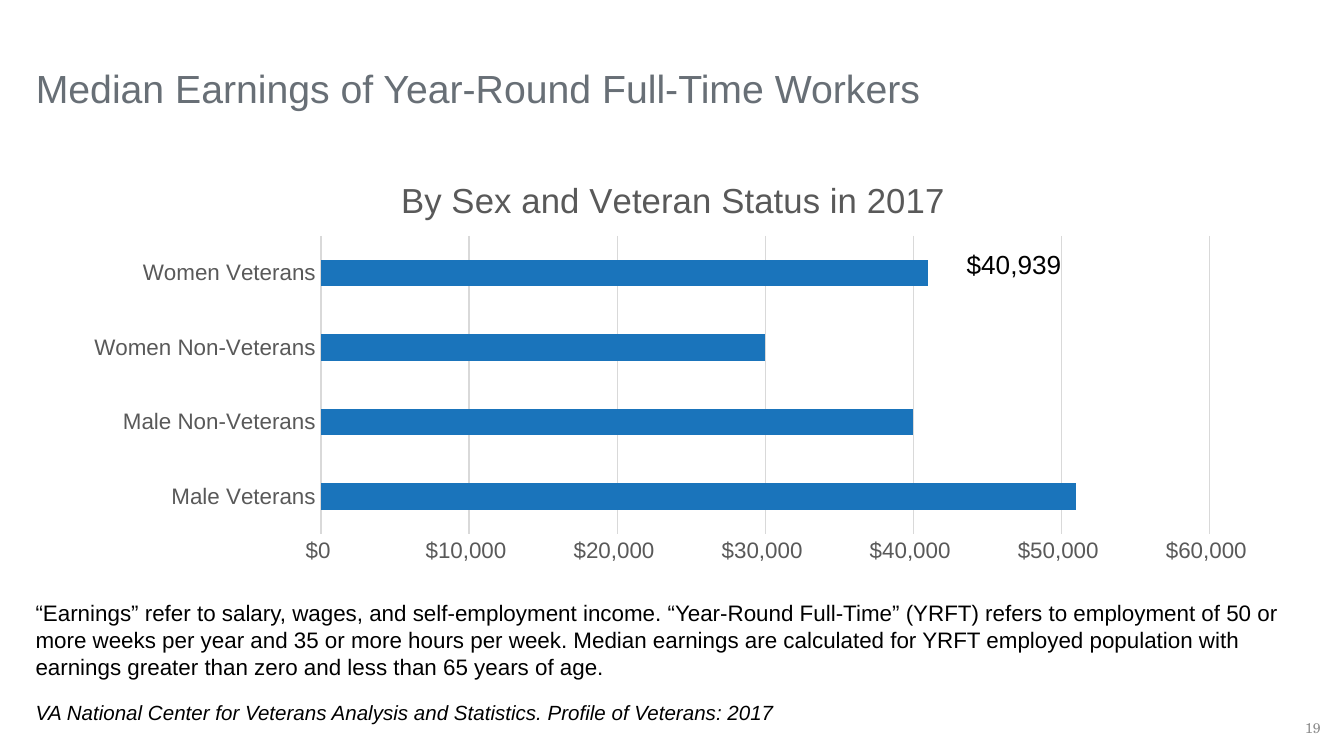
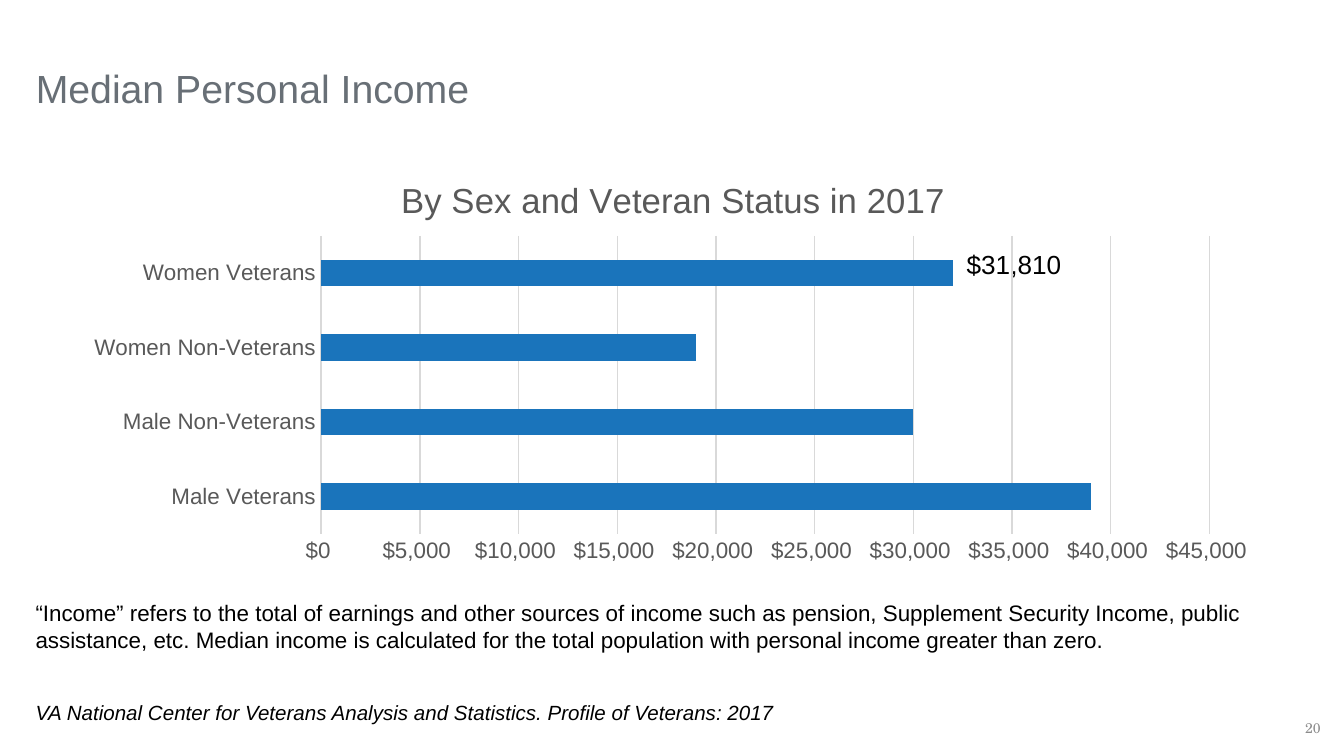
import dataclasses
import typing

import lxml.etree
import pptx
import pptx.chart.data
import pptx.dml.color
import pptx.enum.chart
import pptx.enum.text
import pptx.oxml
import pptx.oxml.ns
import pptx.util

Anchor = pptx.enum.text.MSO_ANCHOR
Align = pptx.enum.text.PP_ALIGN
AutoSize = pptx.enum.text.MSO_AUTO_SIZE

SLIDE_WIDTH = pptx.util.Inches(10)
SLIDE_HEIGHT = pptx.util.Inches(5.625)
COLUMN = SLIDE_WIDTH / 100
ROW = SLIDE_HEIGHT / 100


@dataclasses.dataclass(frozen=True)
class Type:
    size: float
    color: str
    name: str = "Arial"
    italic: bool = False


@dataclasses.dataclass(frozen=True)
class Theme:
    title: Type = Type(21, "686F76")
    chart_title: Type = Type(18.6, "595959")
    axis: Type = Type(12, "595959")
    callout: Type = Type(14, "000000")
    definition: Type = Type(12, "000000")
    citation: Type = Type(11, "000000", italic=True)
    page_number: Type = Type(7.5, "8C8C8C", "TeX Gyre Schola")
    chart: Type = Type(10, "000000")
    bar: str = "1A74BB"
    grid: str = "D9D9D9"
    grid_width: float = 0.75


@dataclasses.dataclass(frozen=True)
class Area:
    """A place on the slide, counted in columns and rows."""
    column: float
    row: float
    columns: float
    rows: float

    def frame(self) -> dict[str, int]:
        return {
            "left": round(self.column * COLUMN),
            "top": round(self.row * ROW),
            "width": round(self.columns * COLUMN),
            "height": round(self.rows * ROW),
        }


@dataclasses.dataclass(frozen=True)
class EarningsSlide:
    title: str
    women_veterans: str
    medians: tuple[int, ...]
    axis_maximum: int
    axis_step: int
    definition: str
    definition_rows: float
    page: int


THEME = Theme()
MARGIN = 1.66
TITLE_AREA = Area(MARGIN, 1.1, 76.7, 14.5)
CALLOUT_AREA = Area(70.94, 32, 14.8, 6.04)
CHART_AREA = Area(5.22, 21.14, 89.8, 54.4)
CITATION_AREA = Area(MARGIN, 91.73, 71.9, 5.16)
PAGE_AREA = Area(95.06, 93.6, 4.2, 5.33)

GROUPS = ("Male Veterans", "Male Non-Veterans", "Women Non-Veterans", "Women Veterans")
CHART_TITLE = "By Sex and Veteran Status in 2017"
CITATION = "VA National Center for Veterans Analysis and Statistics. Profile of Veterans: 2017"
DOLLARS = '"$"#,##0_);[Red]\\("$"#,##0\\)'

SLIDES = (
    EarningsSlide(
        "Median Earnings of Year-Round Full-Time Workers",
        "$40,939",
        (51000, 40000, 30000, 41000),
        60000,
        10000,
        "“Earnings” refer to salary, wages, and self-employment income. “Year-Round "
        "Full-Time” (YRFT) refers to employment of 50 or more weeks per year and 35 or "
        "more hours per week. Median earnings are calculated for YRFT employed population "
        "with earnings greater than zero and less than 65 years of age.",
        12.62,
        19,
    ),
    EarningsSlide(
        "Median Personal Income",
        "$31,810",
        (39000, 30000, 19000, 32000),
        45000,
        5000,
        "“Income” refers to the total of earnings and other sources of income such as "
        "pension, Supplement Security Income, public assistance, etc. Median income is "
        "calculated for the total population with personal income greater than zero.",
        8.89,
        20,
    ),
)


def assign(target: typing.Any, values: dict[str, typing.Any]) -> None:
    for attribute, value in values.items():
        setattr(target, attribute, value)


def rgb(color: str) -> pptx.dml.color.RGBColor:
    return pptx.dml.color.RGBColor.from_string(color)


def set_type(font: typing.Any, style: Type) -> None:
    assign(font, {
        "size": pptx.util.Pt(style.size),
        "name": style.name,
        "italic": style.italic,
        "bold": False,
    })
    font.color.rgb = rgb(style.color)


def write(shape: typing.Any, text: str, style: Type, anchor: Anchor = Anchor.TOP,
          align: Align = Align.LEFT, auto_size: AutoSize = AutoSize.NONE) -> None:
    frame = shape.text_frame
    assign(frame, {
        "text": text,
        "word_wrap": True,
        "vertical_anchor": anchor,
        "auto_size": auto_size,
    })
    paragraph = frame.paragraphs[0]
    paragraph.alignment = align
    set_type(paragraph.runs[0].font, style)


def add_text(slide: typing.Any, area: Area, text: str, style: Type,
             **placing: typing.Any) -> None:
    write(slide.shapes.add_textbox(**area.frame()), text, style, **placing)


def layout_element(modes: dict[str, str], percents: dict[str, float]) -> typing.Any:
    """Make a manual layout from percentages of the chart's size."""
    layout = pptx.oxml.parse_xml(f"<c:layout {pptx.oxml.ns.nsdecls('c')}/>")
    manual = lxml.etree.SubElement(layout, pptx.oxml.ns.qn("c:manualLayout"))
    shares = {tag: f"{percent / 100:.4f}" for tag, percent in percents.items()}
    for tag, value in (modes | shares).items():
        part = lxml.etree.SubElement(manual, pptx.oxml.ns.qn(f"c:{tag}"))
        part.set("val", value)
    return layout


def place_chart_parts(chart: typing.Any) -> None:
    title = chart.chart_title._element
    plot_area = chart._chartSpace.chart.plotArea
    for parent in (title, plot_area):
        for automatic in parent.findall(pptx.oxml.ns.qn("c:layout")):
            parent.remove(automatic)
    edges = {"xMode": "edge", "yMode": "edge"}
    title.find(pptx.oxml.ns.qn("c:tx")).addnext(
        layout_element(edges, {"x": 26.9, "y": 2.6}))
    plot_area.insert(0, layout_element(
        {"layoutTarget": "inner"} | edges, {"x": 20.8, "y": 18.5, "w": 73.6, "h": 72.5}))


def draw_grid_line(line: typing.Any) -> None:
    line.color.rgb = rgb(THEME.grid)
    line.width = pptx.util.Pt(THEME.grid_width)


def add_median_chart(slide: typing.Any, content: EarningsSlide) -> None:
    data = pptx.chart.data.CategoryChartData(number_format=DOLLARS)
    data.categories = GROUPS
    data.add_series("Series 1", content.medians)
    frame = CHART_AREA.frame()
    chart = slide.shapes.add_chart(
        pptx.enum.chart.XL_CHART_TYPE.BAR_CLUSTERED,
        frame["left"], frame["top"], frame["width"], frame["height"], data).chart
    set_type(chart.font, THEME.chart)
    assign(chart, {"has_legend": False, "has_title": True})

    chart.chart_title.include_in_layout = False
    heading = chart.chart_title.text_frame
    heading.text = CHART_TITLE
    set_type(heading.paragraphs[0].runs[0].font, THEME.chart_title)

    bars = chart.plots[0]
    assign(bars, {"gap_width": 182, "vary_by_categories": False})
    bars.series[0].format.fill.solid()
    bars.series[0].format.fill.fore_color.rgb = rgb(THEME.bar)

    groups, dollars = chart.category_axis, chart.value_axis
    no_tick = pptx.enum.chart.XL_TICK_MARK.NONE
    for axis in (groups, dollars):
        assign(axis, {"major_tick_mark": no_tick, "minor_tick_mark": no_tick})
        set_type(axis.tick_labels.font, THEME.axis)
    groups.has_major_gridlines = False
    draw_grid_line(groups.format.line)
    assign(dollars, {
        "minimum_scale": 0,
        "maximum_scale": content.axis_maximum,
        "major_unit": content.axis_step,
        "has_major_gridlines": True,
    })
    assign(dollars.tick_labels, {
        "number_format": DOLLARS,
        "number_format_is_linked": False,
    })
    draw_grid_line(dollars.major_gridlines.format.line)
    dollars.format.line.fill.background()
    place_chart_parts(chart)


def add_earnings_slide(deck: typing.Any, content: EarningsSlide) -> None:
    slide = deck.slides.add_slide(deck.slide_layouts.get_by_name("Title Only"))
    title = slide.shapes.title
    assign(title, TITLE_AREA.frame())
    write(title, content.title, THEME.title, anchor=Anchor.BOTTOM)

    grow = AutoSize.SHAPE_TO_FIT_TEXT
    add_text(slide, CALLOUT_AREA, content.women_veterans, THEME.callout, auto_size=grow)
    add_median_chart(slide, content)
    definition_area = Area(MARGIN, 78.4, 100 - MARGIN, content.definition_rows)
    add_text(slide, definition_area, content.definition, THEME.definition, auto_size=grow)
    add_text(slide, CITATION_AREA, CITATION, THEME.citation, auto_size=grow)
    add_text(slide, PAGE_AREA, str(content.page), THEME.page_number,
             anchor=Anchor.MIDDLE, align=Align.RIGHT)


def main() -> None:
    deck = pptx.Presentation()
    assign(deck, {"slide_width": SLIDE_WIDTH, "slide_height": SLIDE_HEIGHT})
    for content in SLIDES:
        add_earnings_slide(deck, content)
    deck.save("out.pptx")


if __name__ == "__main__":
    main()
